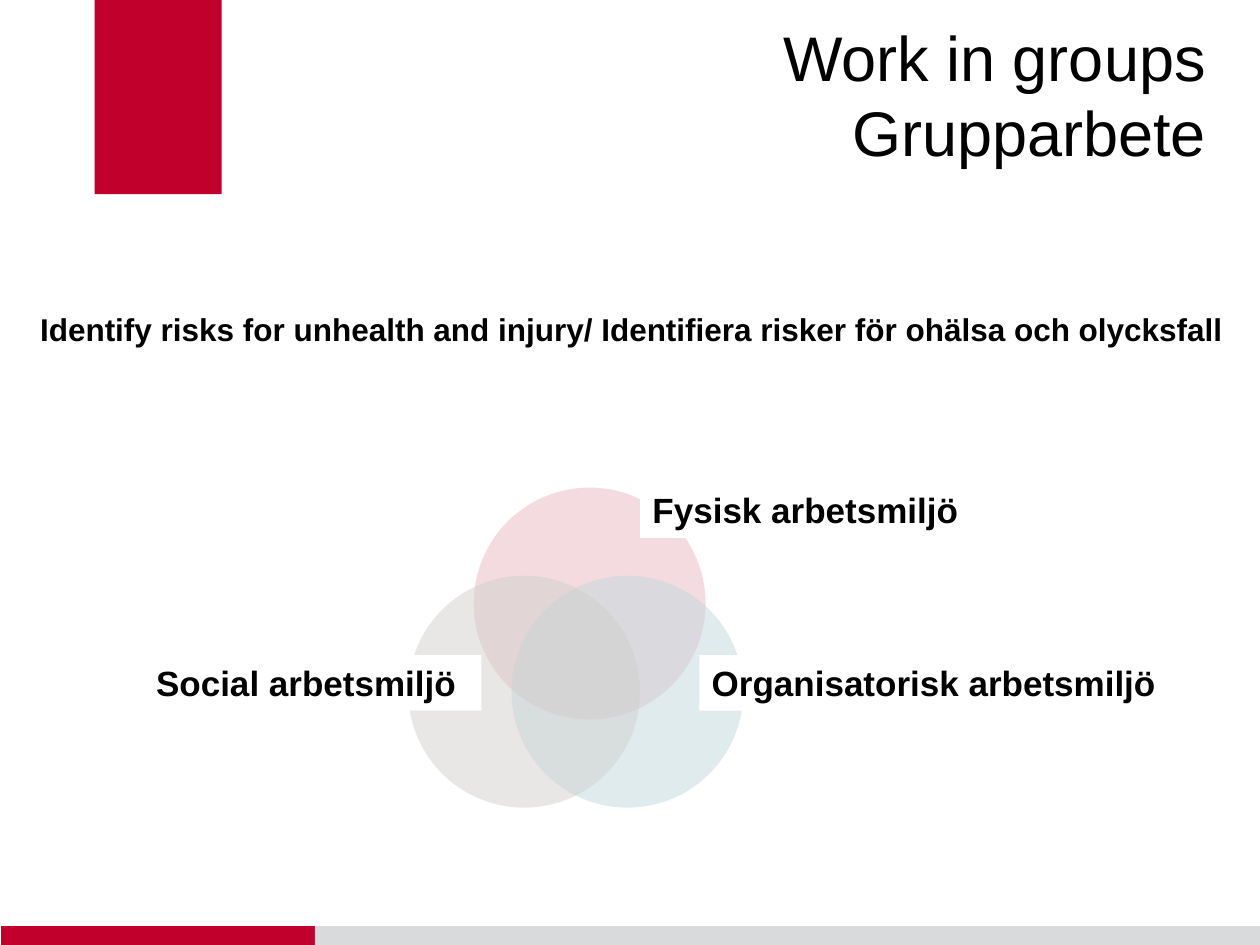
import pptx
import pptx.dml.color
import pptx.enum.shapes
import pptx.enum.text
import pptx.oxml
import pptx.oxml.ns
import pptx.util
from pptx.util import Inches

RED = "C1002C"
GREY = "D9DADC"
WHITE = "FFFFFF"
BLACK = "000000"
RECTANGLE = pptx.enum.shapes.MSO_SHAPE.RECTANGLE
OVAL = pptx.enum.shapes.MSO_SHAPE.OVAL


def color(value):
    return pptx.dml.color.RGBColor.from_string(value)


def add_filled_shape(slide, kind, left, top, width, height, fill):
    shape = slide.shapes.add_shape(
        kind, Inches(left), Inches(top), Inches(width), Inches(height))
    shape.shadow.inherit = False
    shape.fill.solid()
    shape.fill.fore_color.rgb = color(fill)
    shape.line.fill.background()
    return shape


def add_circle(slide, left, top, fill):
    circle = add_filled_shape(slide, OVAL, left, top, 1.84, 1.84, fill)
    fill_color = circle._element.spPr.find(
        ".//" + pptx.oxml.ns.qn("a:srgbClr"))
    alpha = pptx.oxml.parse_xml(
        "<a:alpha %s val='50000'/>" % pptx.oxml.ns.nsdecls("a"))
    fill_color.append(alpha)


def add_run(paragraph, text, size, bold=False):
    run = paragraph.add_run()
    run.text = text
    run.font.name = "Arial"
    run.font.size = pptx.util.Pt(size)
    run.font.bold = bold
    run.font.color.rgb = color(BLACK)


def add_text_box(slide, left, top, width, height):
    box = slide.shapes.add_textbox(
        Inches(left), Inches(top), Inches(width), Inches(height))
    box.text_frame.word_wrap = True
    return box.text_frame


def add_title(slide, lines):
    frame = add_text_box(slide, 1.93, 0.13, 7.64, 1.23)
    frame.margin_left = frame.margin_right = 0
    frame.margin_top = frame.margin_bottom = 0
    frame.vertical_anchor = pptx.enum.text.MSO_ANCHOR.MIDDLE
    paragraph = frame.paragraphs[0]
    paragraph.alignment = pptx.enum.text.PP_ALIGN.RIGHT
    for index, line in enumerate(lines):
        if index:
            paragraph.add_line_break()
        add_run(paragraph, line, 36)


def add_task(slide, text):
    frame = add_text_box(slide, -0.28, 2.41, 10.54, 0.71)
    paragraph = frame.paragraphs[0]
    paragraph._p.get_or_add_pPr().set("marL", str(Inches(0.5)))
    add_run(paragraph, text, 18, bold=True)


def add_label(slide, left, top, width, text):
    label = add_filled_shape(slide, RECTANGLE, left, top, width, 0.44, WHITE)
    frame = label.text_frame
    frame.word_wrap = True
    frame.vertical_anchor = pptx.enum.text.MSO_ANCHOR.TOP
    paragraph = frame.paragraphs[0]
    paragraph.alignment = pptx.enum.text.PP_ALIGN.LEFT
    add_run(paragraph, text, 20, bold=True)


def main():
    presentation = pptx.Presentation()
    presentation.slide_width = Inches(10)
    presentation.slide_height = Inches(7.5)
    slide = presentation.slides.add_slide(presentation.slide_layouts[6])

    add_filled_shape(slide, RECTANGLE, 0.75, -0.01, 1.01, 1.55, RED)
    add_filled_shape(slide, RECTANGLE, 0.01, 7.35, 2.5, 0.17, RED)
    add_filled_shape(slide, RECTANGLE, 2.5, 7.35, 7.5, 0.17, GREY)

    add_title(slide, ["Work in groups", "Grupparbete"])
    add_task(slide, "Identify risks for unhealth and injury/ "
                    "Identifiera risker för ohälsa och olycksfall")

    add_circle(slide, 3.76, 3.87, "E9B9C2")
    add_circle(slide, 4.06, 4.57, "C3D8DE")
    add_circle(slide, 3.24, 4.57, "D2D0CD")

    add_label(slide, 5.08, 3.83, 4.09, "Fysisk arbetsmiljö")
    add_label(slide, 1.14, 5.2, 2.68, "Social arbetsmiljö")
    add_label(slide, 5.55, 5.2, 4.09, "Organisatorisk arbetsmiljö")

    presentation.save("out.pptx")


if __name__ == "__main__":
    main()
